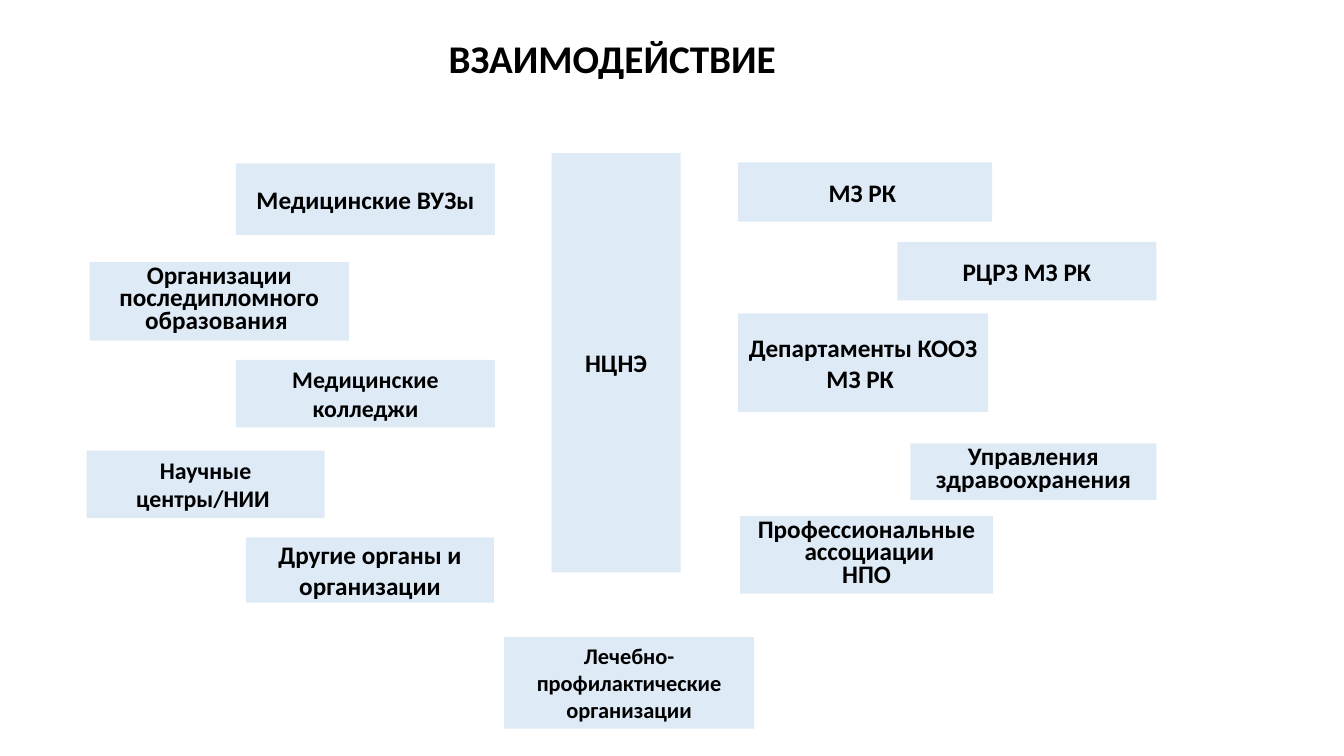
from pptx import Presentation, util as u
from pptx.dml import color
from pptx.enum import shapes, text

BOX_FILL = "DEEBF7"
INK = "000000"
TOP, MIDDLE = text.MSO_ANCHOR.TOP, text.MSO_ANCHOR.MIDDLE

EDUCATION_AND_SCIENCE = [
    ((2.34, 1.62, 2.57, 0.71), ["Медицинские ВУЗы"], 18, MIDDLE, None),
    ((0.89, 2.6, 2.57, 0.78), ["Организации последипломного образования "], 18, TOP, 16),
    ((2.34, 3.57, 2.57, 0.67), ["Медицинские колледжи"], 17, TOP, None),
    ((0.86, 4.47, 2.36, 0.67), ["Научные центры/НИИ "], 17, TOP, None),
    ((2.44, 5.33, 2.46, 0.65), ["Другие органы и организации"], 18, MIDDLE, None),
]
CENTRE = [
    ((5.47, 1.52, 1.28, 4.16), ["НЦНЭ"], 18, MIDDLE, None),
    ((5, 6.32, 2.48, 0.91), ["Лечебно-профилактические организации"], 16, TOP, None),
]
AUTHORITIES = [
    ((7.32, 1.61, 2.52, 0.59), ["МЗ РК "], 18, MIDDLE, None),
    ((8.9, 2.4, 2.57, 0.58), ["РЦРЗ МЗ РК"], 18, MIDDLE, None),
    ((7.32, 3.11, 2.48, 0.98), ["Департаменты КООЗ МЗ РК "], 18, MIDDLE, None),
    ((9.03, 4.4, 2.44, 0.56), ["Управления здравоохранения"], 18, TOP, 16),
    ((7.34, 5.12, 2.51, 0.77), ["Профессиональные", " ассоциации", "НПО"], 18, TOP, 16),
]


def rgb(value):
    return color.RGBColor.from_string(value)


def write(frame, lines, size, anchor, spacing=None):
    frame.word_wrap = True
    frame.vertical_anchor = anchor
    for index, line in enumerate(lines):
        paragraph = frame.add_paragraph() if index else frame.paragraphs[0]
        paragraph.alignment = text.PP_ALIGN.CENTER
        if spacing:
            paragraph.line_spacing = u.Pt(spacing)
        run = paragraph.add_run()
        run.text = line
        run.font.name = "Calibri"
        run.font.size = u.Pt(size)
        run.font.bold = True
        run.font.color.rgb = rgb(INK)


def add_title(slide, box):
    shape = slide.shapes.add_textbox(*map(u.Inches, box))
    write(shape.text_frame, ["ВЗАИМОДЕЙСТВИЕ "], 28, TOP)


def add_organisation(slide, box, lines, size, anchor, spacing):
    shape = slide.shapes.add_shape(shapes.MSO_SHAPE.RECTANGLE, *map(u.Inches, box))
    shape.shadow.inherit = False
    shape.fill.solid()
    shape.fill.fore_color.rgb = rgb(BOX_FILL)
    shape.line.fill.background()
    write(shape.text_frame, lines, size, anchor, spacing)
    if anchor == TOP:
        shape.text_frame.auto_size = text.MSO_AUTO_SIZE.SHAPE_TO_FIT_TEXT


def main():
    presentation = Presentation()
    presentation.slide_width = u.Inches(13.33)
    presentation.slide_height = u.Inches(7.5)
    slide = presentation.slides.add_slide(presentation.slide_layouts[6])
    add_title(slide, (1.47, 0.29, 9.29, 0.57))
    for organisation in EDUCATION_AND_SCIENCE + CENTRE + AUTHORITIES:
        add_organisation(slide, *organisation)
    presentation.save("out.pptx")


if __name__ == "__main__":
    main()
